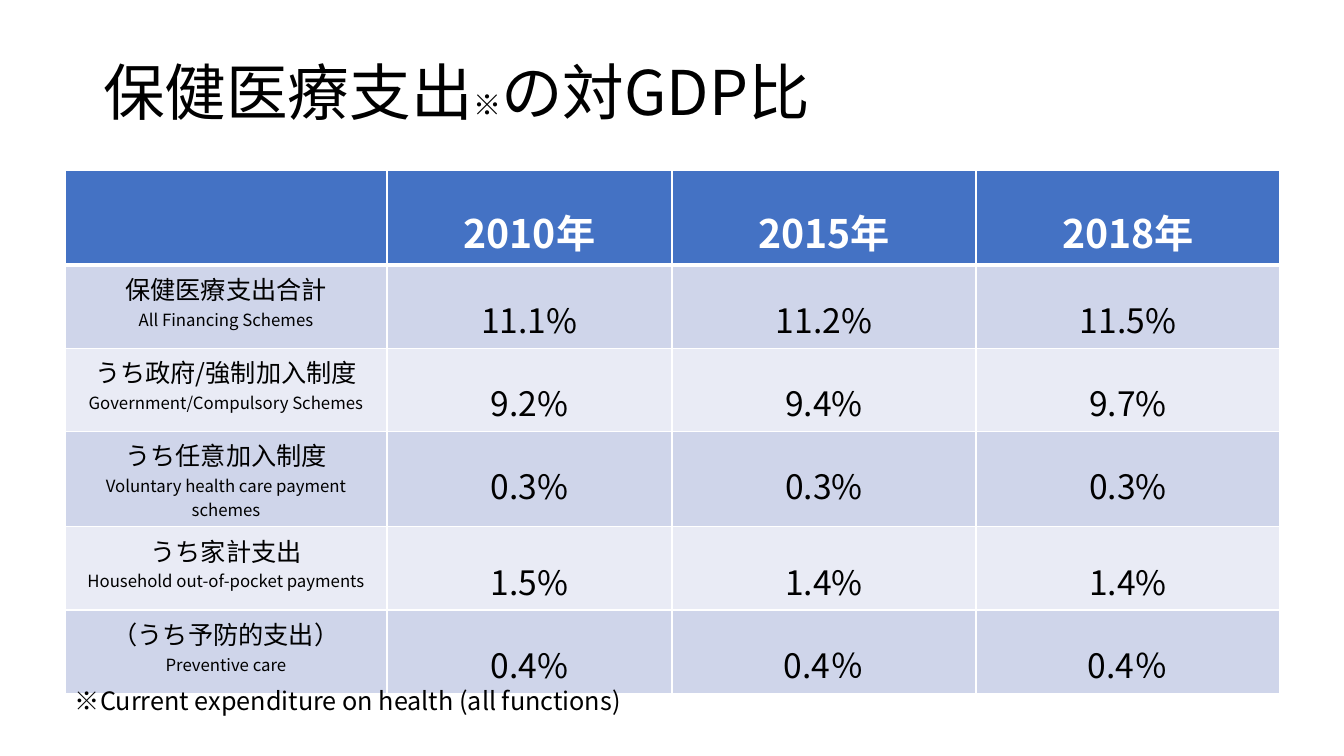
"""Build a slide with a table of health expenditure as a share of GDP."""
import lxml.etree
import pptx
import pptx.dml.color
import pptx.enum.text
import pptx.oxml.ns
import pptx.util

EMU_PER_PX = 914400 / 100.8
FONT = "Noto Sans CJK JP"
COLORS = {
    "text": "000000",
    "white": "FFFFFF",
    "header": "4472C4",
    "odd": "CFD5EA",
    "even": "E9EBF5",
}
COLUMN_WIDTHS = [322, 285, 304, 304]
ROW_HEIGHTS = [80, 80, 80, 84, 80, 80]
YEARS = ["2010年", "2015年", "2018年"]
SCHEMES = [
    ("保健医療支出合計", "All Financing Schemes", ["11.1%", "11.2%", "11.5%"]),
    ("うち政府/強制加入制度", "Government/Compulsory Schemes", ["9.2%", "9.4%", "9.7%"]),
    ("うち任意加入制度", "Voluntary health care payment schemes", ["0.3%", "0.3%", "0.3%"]),
    ("うち家計支出", "Household out-of-pocket payments", ["1.5%", "1.4%", "1.4%"]),
    ("（うち予防的支出）", "Preventive care", ["0.4%", "0.4％", "0.4％"]),
]
CENTER = pptx.enum.text.PP_ALIGN.CENTER
LEFT = pptx.enum.text.PP_ALIGN.LEFT


def px(length):
    return pptx.util.Emu(round(length * EMU_PER_PX))


def rgb(name):
    return pptx.dml.color.RGBColor.from_string(COLORS[name])


def write_text(para, text, size=18, color="text", bold=False, align=LEFT, spacing=1.0):
    para.alignment = align
    para.line_spacing = spacing
    span = para.add_run()
    span.text = text
    span.font.size = pptx.util.Pt(size)
    span.font.bold = bold
    span.font.color.rgb = rgb(color)
    span.font.name = FONT
    east_asian = lxml.etree.SubElement(span.font._element, pptx.oxml.ns.qn("a:ea"))
    east_asian.set("typeface", FONT)


def set_borders(cell, top=1, bottom=1):
    properties = cell._tc.get_or_add_tcPr()
    widths = {"a:lnL": 1, "a:lnR": 1, "a:lnT": top, "a:lnB": bottom}
    for index, (tag, width) in enumerate(widths.items()):
        line = lxml.etree.Element(pptx.oxml.ns.qn(tag), w=str(pptx.util.Pt(width)))
        fill = lxml.etree.SubElement(line, pptx.oxml.ns.qn("a:solidFill"))
        lxml.etree.SubElement(fill, pptx.oxml.ns.qn("a:srgbClr"), val=COLORS["white"])
        properties.insert(index, line)


def format_cell(cell, row):
    cell.fill.solid()
    cell.fill.fore_color.rgb = rgb("header" if row == 0 else "odd" if row % 2 else "even")
    set_borders(cell, top=3 if row == 1 else 1, bottom=3 if row == 0 else 1)


def add_title(slide):
    title = slide.shapes.title
    title.left, title.top, title.width, title.height = px(93), px(23), px(1159), px(146)
    title.text_frame.vertical_anchor = pptx.enum.text.MSO_ANCHOR.MIDDLE
    para = title.text_frame.paragraphs[0]
    for text, size in [("保健医療支出", 44), ("※", 20), ("の対GDP比", 44)]:
        write_text(para, text, size=size, spacing=0.9)


def add_expenditure_table(slide):
    frame = slide.shapes.add_table(
        len(ROW_HEIGHTS), len(COLUMN_WIDTHS), px(65), px(170),
        px(sum(COLUMN_WIDTHS)), px(sum(ROW_HEIGHTS)))
    table = frame.table
    for column, width in zip(table.columns, COLUMN_WIDTHS):
        column.width = px(width)
    for index, height in enumerate(ROW_HEIGHTS):
        table.rows[index].height = px(height)
        for cell in table.rows[index].cells:
            format_cell(cell, index)
    for column, year in enumerate(YEARS, start=1):
        para = table.cell(0, column).text_frame.paragraphs[0]
        write_text(para, year, size=28, color="white", bold=True, align=CENTER, spacing=1.5)
    for row, (name, english, shares) in enumerate(SCHEMES, start=1):
        label = table.cell(row, 0).text_frame
        write_text(label.paragraphs[0], name, align=CENTER)
        write_text(label.add_paragraph(), english, size=12, align=CENTER)
        for column, share in enumerate(shares, start=1):
            para = table.cell(row, column).text_frame.paragraphs[0]
            write_text(para, share, size=24, align=CENTER, spacing=1.5)


def add_footnote(slide):
    box = slide.shapes.add_textbox(px(65), px(680), px(628), px(40))
    box.text_frame.word_wrap = True
    write_text(box.text_frame.paragraphs[0], "※Current expenditure on health (all functions)")


def main():
    deck = pptx.Presentation()
    deck.slide_width, deck.slide_height = px(1344), px(756)
    slide = deck.slides.add_slide(deck.slide_layouts[5])
    add_title(slide)
    add_expenditure_table(slide)
    add_footnote(slide)
    deck.save("out.pptx")


if __name__ == "__main__":
    main()
